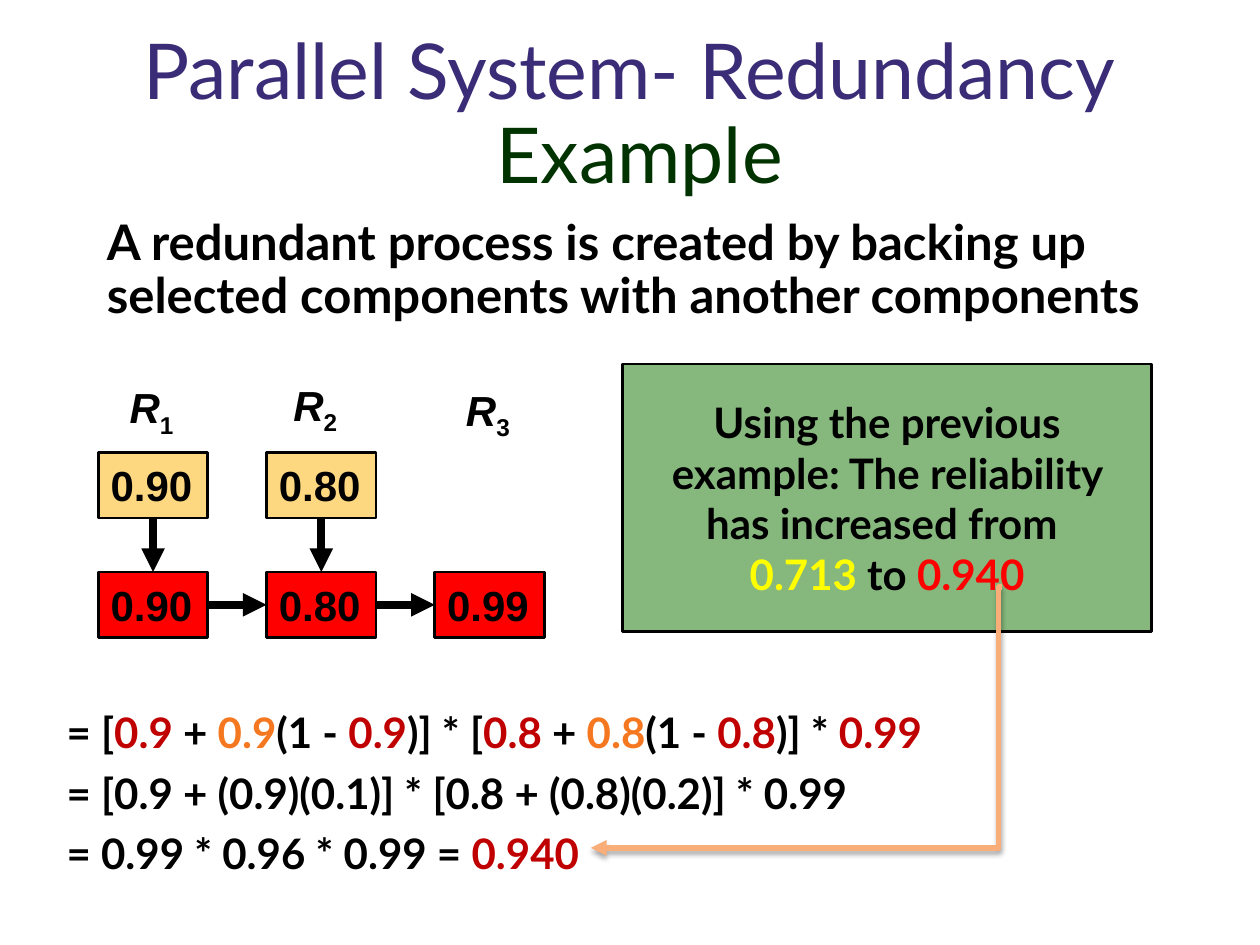
"""Build the slide on parallel redundancy with its reliability example."""
from lxml.etree import SubElement as Sub
from pptx import Presentation
from pptx.dml.color import RGBColor as RGB
from pptx.enum.shapes import MSO_CONNECTOR as Link, MSO_SHAPE as Shape
from pptx.enum.text import MSO_ANCHOR as Anchor, PP_ALIGN as Align
from pptx.oxml.ns import qn
from pptx.util import Inches, Pt

BLACK, WHITE = RGB(0, 0, 0), RGB(255, 255, 255)
INDIGO, FOREST = RGB(0x3A, 0x2C, 0x76), RGB(0, 0x33, 0)
SAND, RED, GREEN = RGB(0xFE, 0xD8, 0x80), RGB(255, 0, 0), RGB(0x86, 0xB8, 0x7D)
DARK, ORANGE = RGB(0xC0, 0, 0), RGB(0xF5, 0x77, 0x20)
YELLOW, PEACH = RGB(255, 255, 0), RGB(0xF9, 0xAD, 0x78)

TITLE = [[("Parallel System- Redundancy", INDIGO), ("\n", INDIGO), (" Example", FOREST)]]
INTRO = [[("A redundant process is created by backing up "
           "selected components with another components", BLACK)]]
NOTE = [
    [("Using the previous example: The reliability has increased from ", BLACK)],
    [("0.713", YELLOW), (" to ", BLACK), ("0.940", RED)],
]
STEPS = [
    [("= [", BLACK), ("0.9", DARK), (" + ", BLACK), ("0.9", ORANGE),
     ("(1 - ", BLACK), ("0.9", DARK), (")] * [", BLACK), ("0.8", DARK),
     (" + ", BLACK), ("0.8", ORANGE), ("(1 - ", BLACK), ("0.8", DARK),
     (")] * ", BLACK), ("0.99", DARK)],
    [("= [0.9 + (0.9)(0.1)] * [0.8 + (0.8)(0.2)] * 0.99", BLACK)],
    [("= 0.99 * 0.96 * 0.99 = ", BLACK), ("0.940", DARK)],
]
PARTS = [
    {"sub": "1", "main": "0.90", "spare": "0.90", "tag": (0.93, 2.98)},
    {"sub": "2", "main": "0.80", "spare": "0.80", "tag": (2.23, 2.96)},
    {"sub": "3", "main": "0.99", "spare": None, "tag": (3.6, 3.0)},
]
LEFT, STEP, WIDE, HIGH = 0.78, 1.335, 0.87, 0.52
SPARE_TOP, MAIN_TOP = 3.59, 4.54

deck = Presentation()
deck.slide_width, deck.slide_height = Inches(10), Inches(7.5)
slide = deck.slides.add_slide(deck.slide_layouts[6])
slide.background.fill.solid()
slide.background.fill.fore_color.rgb = WHITE


def write(frame, paras, size, font="Lato", bold=True, align=Align.LEFT, space=None):
    for i, runs in enumerate(paras):
        para = frame.paragraphs[0] if i == 0 else frame.add_paragraph()
        para.alignment, para.line_spacing = align, space
        for text, color in runs:
            if text == "\n":
                para.add_line_break()
                continue
            run = para.add_run()
            run.text = text
            run.font.name, run.font.size, run.font.bold = font, Pt(size), bold
            run.font.color.rgb = color


def label(at, paras, size, wrap=True, **style):
    frame = slide.shapes.add_textbox(*map(Inches, at)).text_frame
    frame.word_wrap = wrap
    write(frame, paras, size, **style)
    return frame


def box(at, fill, paras, wrap=True, **style):
    rect = slide.shapes.add_shape(Shape.RECTANGLE, *map(Inches, at))
    rect.shadow.inherit = False
    rect.fill.solid()
    rect.fill.fore_color.rgb = fill
    rect.line.color.rgb, rect.line.width = BLACK, Pt(1.5)
    rect.text_frame.word_wrap = wrap
    write(rect.text_frame, paras, 24, **style)
    return rect


def arrow(kind, ends, color, width):
    wire = slide.shapes.add_connector(kind, *map(Inches, ends))
    wire.line.color.rgb, wire.line.width = color, Pt(width)
    Sub(wire.line._get_or_add_ln(), qn("a:tailEnd"), type="triangle")
    return wire, Sub(wire._element.spPr, qn("a:effectLst"))


def join(start, side, end, face):
    wire, _ = arrow(Link.STRAIGHT, (0, 0, 1, 1), BLACK, 4.5)
    wire.begin_connect(start, side)
    wire.end_connect(end, face)


head = label((0.75, 0.27, 8.5, 1.31), TITLE, 44, bold=False, align=Align.CENTER, space=0.9)
head.vertical_anchor = Anchor.MIDDLE
label((0.75, 1.68, 8.49, 0.95), INTRO, 28, space=0.9)

last = None
for col, part in enumerate(PARTS):
    tag = label((*part["tag"], 0.57, 0.5), [[("R", BLACK), (part["sub"], BLACK)]],
                24, wrap=False, font="Arial")
    name, sub = tag.paragraphs[0].runs
    name.font.italic = True
    sub._r.get_or_add_rPr().set("baseline", "-25000")
    x = LEFT + col * STEP
    main = box((x, MAIN_TOP, WIDE, HIGH), RED, [[(part["main"], BLACK)]],
               wrap=False, font="Arial")
    if part["spare"]:
        spare = box((x, SPARE_TOP, WIDE, HIGH), SAND, [[(part["spare"], BLACK)]],
                    wrap=False, font="Arial")
        join(spare, 2, main, 0)
    if last:
        join(last, 3, main, 1)
    last = main

label((0.43, 5.48, 7.97, 1.53), STEPS, 24, space=1.2)
note = box((4.94, 2.89, 4.2, 2.12), GREEN, NOTE, align=Align.CENTER).text_frame
note.margin_left = note.margin_right = Inches(0.18)
note.margin_top = note.margin_bottom = Inches(0.25)

bend, glow = arrow(Link.ELBOW, (7.95, 4.66, 4.69, 6.73), PEACH, 3)
guides = bend._element.spPr.find(qn("a:prstGeom")).find(qn("a:avLst"))
Sub(guides, qn("a:gd"), name="adj1", fmla="val 700")
shade = Sub(glow, qn("a:outerShdw"), blurRad=str(Pt(3.1)), dist=str(Pt(1.8)),
            dir="5400000", rotWithShape="0")
Sub(Sub(shade, qn("a:srgbClr"), val=str(BLACK)), qn("a:alpha"), val="35000")

deck.save("out.pptx")
